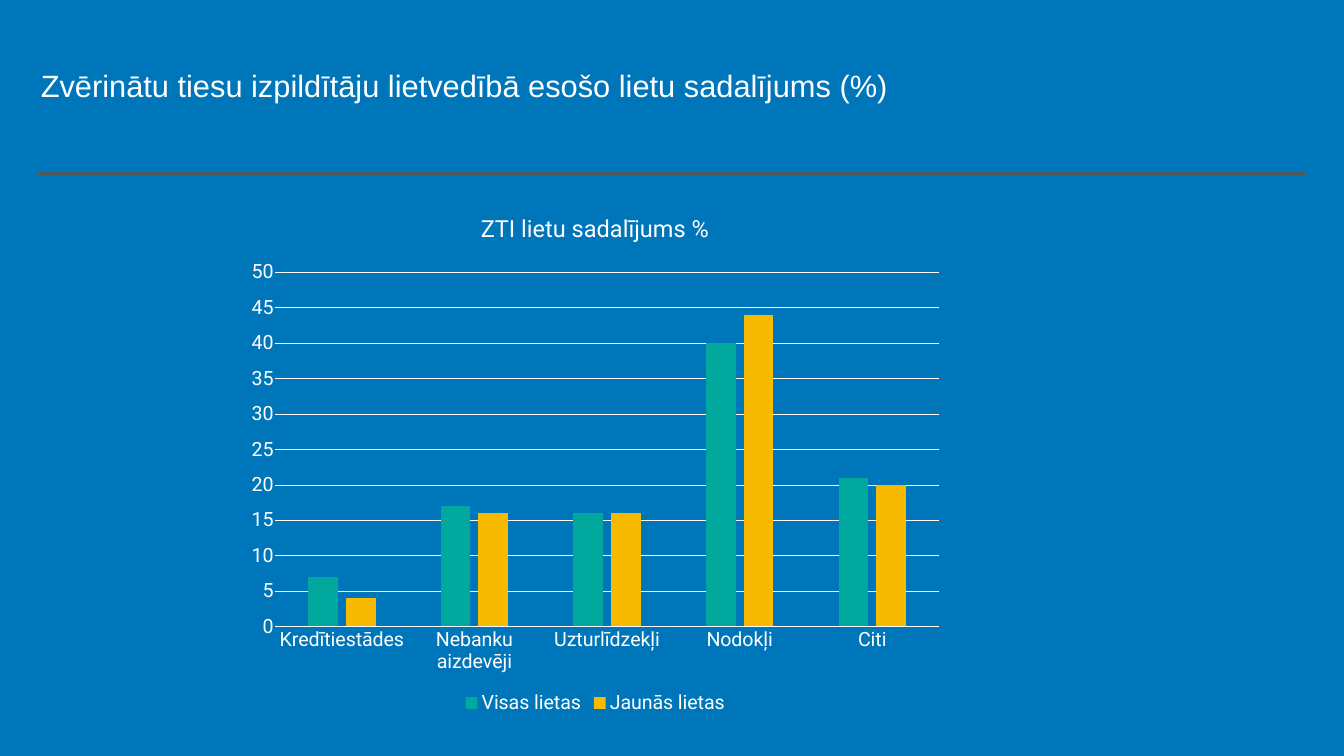
from pptx import Presentation
from pptx import util as u
from pptx.chart.data import CategoryChartData
from pptx.dml.color import RGBColor
from pptx.enum import chart as ch, shapes, text
from pptx.oxml.ns import qn
from lxml import etree

theme = {
    "back": "0076BA", "ink": "FFFFFF", "rule": "53585F",
    "bars": ["00A89D", "F8BA00"],
    "head": "Arial", "body": "Roboto",
    "big": 44, "mid": 33.6, "small": 28,
}


def paint(fill, tone):
    fill.solid()
    fill.fore_color.rgb = RGBColor.from_string(tone)


def style(font, face, size):
    font.name = face
    font.size = u.Pt(size)
    font.bold = False
    paint(font.fill, theme["ink"])


deck = Presentation()
deck.slide_width = wide = u.Inches(26.67)
deck.slide_height = high = u.Inches(15)
edge = u.Inches(0.75)
slide = deck.slides.add_slide(deck.slide_layouts[5])
paint(slide.background.fill, theme["back"])

title = slide.shapes.title
title.left, title.top = edge, u.Inches(1.27)
title.width, title.height = u.Inches(20.6), u.Inches(0.85)
frame = title.text_frame
frame.auto_size = text.MSO_AUTO_SIZE.NONE
frame.word_wrap = True
frame.vertical_anchor = text.MSO_ANCHOR.MIDDLE
frame.margin_left = frame.margin_right = u.Inches(0.06)
frame.margin_top = frame.margin_bottom = u.Inches(0.06)
para = frame.paragraphs[0]
para.alignment = text.PP_ALIGN.LEFT
run = para.add_run()
run.text = "Zvērinātu tiesu izpildītāju lietvedībā esošo lietu sadalījums (%)"
style(run.font, theme["head"], theme["big"])

level = int(high * 0.23)
rule = slide.shapes.add_connector(
    shapes.MSO_CONNECTOR.STRAIGHT, edge, level, wide - edge, level)
paint(rule.line.fill, theme["rule"])
rule.line.width = u.Pt(4)
etree.SubElement(rule._element.spPr, qn("a:effectLst"))

data = CategoryChartData()
data.categories = ["Kredītiestādes", "Nebanku aizdevēji", "Uzturlīdzekļi",
                   "Nodokļi", "Citi"]
data.add_series("Visas lietas", [7, 17, 16, 40, 21])
data.add_series("Jaunās lietas", [4, 16, 16, 44, 20])
chart = slide.shapes.add_chart(
    ch.XL_CHART_TYPE.COLUMN_CLUSTERED, u.Inches(4.71), u.Inches(3.88),
    u.Inches(14.2), u.Inches(10.37), data).chart
style(chart.font, theme["body"], theme["small"])

chart.has_title = True
run = chart.chart_title.text_frame.paragraphs[0].add_run()
run.text = "ZTI lietu sadalījums %"
style(run.font, theme["body"], theme["mid"])
chart.chart_title.include_in_layout = False

chart.has_legend = True
chart.legend.position = ch.XL_LEGEND_POSITION.BOTTOM
chart.legend.include_in_layout = False
style(chart.legend.font, theme["body"], theme["small"])

cats, vals = chart.category_axis, chart.value_axis
for axis in (cats, vals):
    axis.major_tick_mark = axis.minor_tick_mark = ch.XL_TICK_MARK.NONE
    style(axis.tick_labels.font, theme["body"], theme["small"])
vals.minimum_scale, vals.maximum_scale, vals.major_unit = 0, 50, 5
vals.has_major_gridlines = True
vals.format.line.fill.background()
for line in (cats.format.line, vals.major_gridlines.format.line):
    paint(line.fill, theme["ink"])
    line.width = u.Pt(0.75)

plot = chart.plots[0]
plot.gap_width, plot.overlap = 219, -27
plot.vary_by_categories = False
for bar, tone in zip(plot.series, theme["bars"]):
    paint(bar.format.fill, tone)

deck.save("out.pptx")
